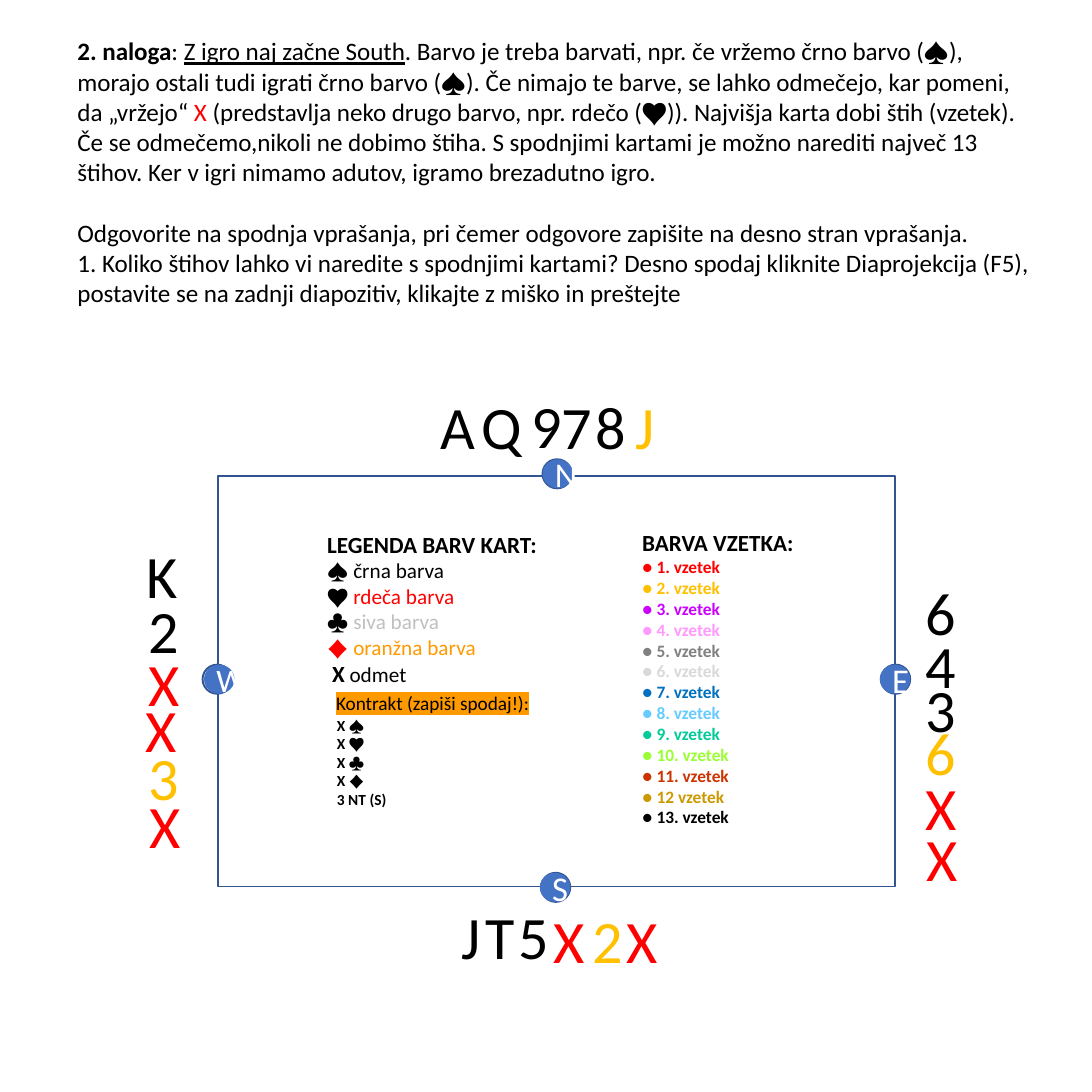
from dataclasses import dataclass

from lxml import etree
from pptx import Presentation
from pptx.dml.color import RGBColor
from pptx.enum.shapes import MSO_SHAPE
from pptx.enum.text import MSO_ANCHOR, MSO_AUTO_SIZE, PP_ALIGN
from pptx.oxml.ns import qn
from pptx.util import Inches, Pt

RECTANGLE, OVAL = MSO_SHAPE.RECTANGLE, MSO_SHAPE.OVAL
LEFT, CENTER, RIGHT = PP_ALIGN.LEFT, PP_ALIGN.CENTER, PP_ALIGN.RIGHT
MIDDLE = MSO_ANCHOR.MIDDLE
GROW = MSO_AUTO_SIZE.SHAPE_TO_FIT_TEXT
FONT = "Calibri"
BLACK, WHITE, RED, GOLD, ORANGE = "000000", "FFFFFF", "FF0000", "FFC000", "FF9900"
TABLE_LINE, SEAT_FILL = "325491", "4472C4"


@dataclass(frozen=True)
class Run:
    text: str
    size: float
    color: str = BLACK
    bold: bool = False
    underline: bool = False
    highlight: str = ""


@dataclass(frozen=True)
class Card:
    rank: str
    left: float
    top: float
    color: str = BLACK


@dataclass(frozen=True)
class Seat:
    letter: str
    left: float
    top: float
    ring_left: float
    size: float = 18


def rgb(color: str) -> RGBColor:
    return RGBColor.from_string(color)


def write(frame, lines: list[list[Run]], align=LEFT, gaps=()) -> None:
    frame.word_wrap = True
    for index, line in enumerate(lines):
        paragraph = frame.paragraphs[0] if index == 0 else frame.add_paragraph()
        paragraph.alignment = align
        if index in gaps:
            paragraph.space_before = Pt(16)
        for part in line:
            run = paragraph.add_run()
            run.text = part.text
            font = run.font
            font.size, font.bold = Pt(part.size), part.bold
            font.underline = part.underline
            font.color.rgb = rgb(part.color)
            if part.highlight:
                marker = etree.Element(qn("a:highlight"))
                etree.SubElement(marker, qn("a:srgbClr"), val=part.highlight)
                run._r.get_or_add_rPr().find(qn("a:solidFill")).addnext(marker)
            font.name = FONT


def add_text(slide, left: float, top: float, width: float, height: float,
             lines: list[list[Run]], **layout) -> None:
    box = slide.shapes.add_textbox(Inches(left), Inches(top), Inches(width), Inches(height))
    write(box.text_frame, lines, **layout)
    box.text_frame.auto_size = GROW


def add_figure(slide, kind, left: float, top: float, width: float, height: float,
               fill: str = "", line: str = ""):
    figure = slide.shapes.add_shape(kind, Inches(left), Inches(top), Inches(width), Inches(height))
    figure.shadow.inherit = False
    if fill:
        figure.fill.solid()
        figure.fill.fore_color.rgb = rgb(fill)
    else:
        figure.fill.background()
    if line:
        figure.line.color.rgb = rgb(line)
        figure.line.width = Pt(1)
    else:
        figure.line.fill.background()
    return figure


CARDS = [
    Card("A", 3.08, 2.76), Card("Q", 3.37, 2.76), Card("9", 3.73, 2.75),
    Card("7", 3.95, 2.76), Card("8", 4.19, 2.76), Card("J", 4.48, 2.76, GOLD),
    Card("K", 0.96, 3.83), Card("2", 0.97, 4.23), Card("X", 0.97, 4.61, RED),
    Card("X", 0.95, 4.94, RED), Card("3", 0.97, 5.29, GOLD), Card("X", 0.98, 5.63, RED),
    Card("6", 6.57, 4.1), Card("4", 6.57, 4.48), Card("3", 6.57, 4.8),
    Card("6", 6.57, 5.11, GOLD), Card("X", 6.57, 5.5, RED), Card("X", 6.58, 5.87, RED),
    Card("J", 3.23, 6.43), Card("T", 3.4, 6.43), Card("5", 3.64, 6.43),
    Card("X", 3.89, 6.46, RED), Card("2", 4.17, 6.46, GOLD), Card("X", 4.42, 6.46, RED),
]

SEATS = [
    Seat("N", 3.91, 3.31, 3.91),
    Seat("S", 3.89, 6.29, 3.9),
    Seat("W", 1.47, 4.79, 1.46, 17),
    Seat("E", 6.34, 4.79, 6.35),
]

SUITS = [
    ("♠", BLACK, "črna barva", BLACK),
    ("♥", BLACK, "rdeča barva", RED),
    ("♣", BLACK, "siva barva", "C0C0C0"),
    ("♦", RED, "oranžna barva", ORANGE),
]

TRICKS = [
    ("1.", RED), ("2.", GOLD), ("3.", "CC00FF"), ("4.", "FF99FF"), ("5.", "808080"),
    ("6.", "D9D9D9"), ("7.", "0070C0"), ("8.", "66CCFF"), ("9.", "00CC99"),
    ("10.", "99FF33"), ("11.", "CC3300"), ("12", "CC9900"), ("13.", BLACK),
]

TASK = [
    [
        Run("2. naloga", 13, bold=True),
        Run(": ", 13),
        Run("Z igro naj začne South", 13, underline=True),
        Run(". Barvo je treba barvati, npr. če vržemo črno barvo (♠), morajo ostali tudi "
            "igrati črno barvo (♠). Če nimajo te barve, se lahko odmečejo, kar pomeni, "
            "da „vržejo“ ", 13),
        Run("X", 13, RED),
        Run(" (predstavlja neko drugo barvo, npr. rdečo (♥)). Najvišja karta dobi štih "
            "(vzetek). Če se odmečemo,nikoli ne dobimo štiha. S spodnjimi kartami je možno "
            "narediti največ 13 štihov. Ker v igri nimamo adutov, igramo brezadutno igro.", 13),
    ],
    [Run("Odgovorite na spodnja vprašanja, pri čemer odgovore zapišite na desno stran "
         "vprašanja.", 13)],
    [Run("1. Koliko štihov lahko vi naredite s spodnjimi kartami? Desno spodaj kliknite "
         "Diaprojekcija (F5), postavite se na zadnji diapozitiv, klikajte z miško in "
         "preštejte", 13)],
]


def main() -> None:
    deck = Presentation()
    deck.slide_width = deck.slide_height = Inches(7.87)
    slide = deck.slides.add_slide(deck.slide_layouts[6])

    for card in CARDS:
        add_text(slide, card.left, card.top, 0.56, 0.63, [[Run(card.rank, 31.2, card.color)]])

    legend = [[Run("LEGENDA BARV KART:", 12, bold=True)]]
    legend += [[Run(f"{suit} ", 11, suit_color), Run(label, 11, color)]
               for suit, suit_color, label, color in SUITS]
    legend.append([Run(" ", 11), Run("X", 12, bold=True), Run(" odmet", 11)])
    add_text(slide, 2.26, 3.77, 1.75, 1.25, legend)

    tricks = [[Run("BARVA VZETKA:", 12, bold=True)]]
    tricks += [[Run(f"● {number} vzetek", 9, color, bold=True)] for number, color in TRICKS]
    add_text(slide, 4.53, 3.76, 1.33, 2.27, tricks)

    add_text(slide, 2.24, 4.93, 1.67, 0.27,
             [[Run("Kontrakt (zapiši spodaj!):", 10, highlight=ORANGE)]], align=RIGHT)
    contracts = [f"X {suit[0]}" for suit in SUITS] + ["3 NT (S)"]
    add_text(slide, 2.33, 5.11, 0.8, 0.77, [[Run(text, 8, bold=True)] for text in contracts])
    add_text(slide, 0.46, 0.21, 7.1, 2.07, TASK, gaps=(1,))

    add_figure(slide, RECTANGLE, 1.57, 3.43, 4.88, 2.96, line=TABLE_LINE)
    for seat in SEATS:
        add_figure(slide, OVAL, seat.ring_left, seat.top, 0.21, 0.21, line=TABLE_LINE)
        disc = add_figure(slide, OVAL, seat.left, seat.top, 0.22, 0.21, fill=SEAT_FILL)
        write(disc.text_frame, [[Run(seat.letter, seat.size, WHITE)]], align=CENTER)
        disc.text_frame.vertical_anchor = MIDDLE

    deck.save("out.pptx")


if __name__ == "__main__":
    main()
